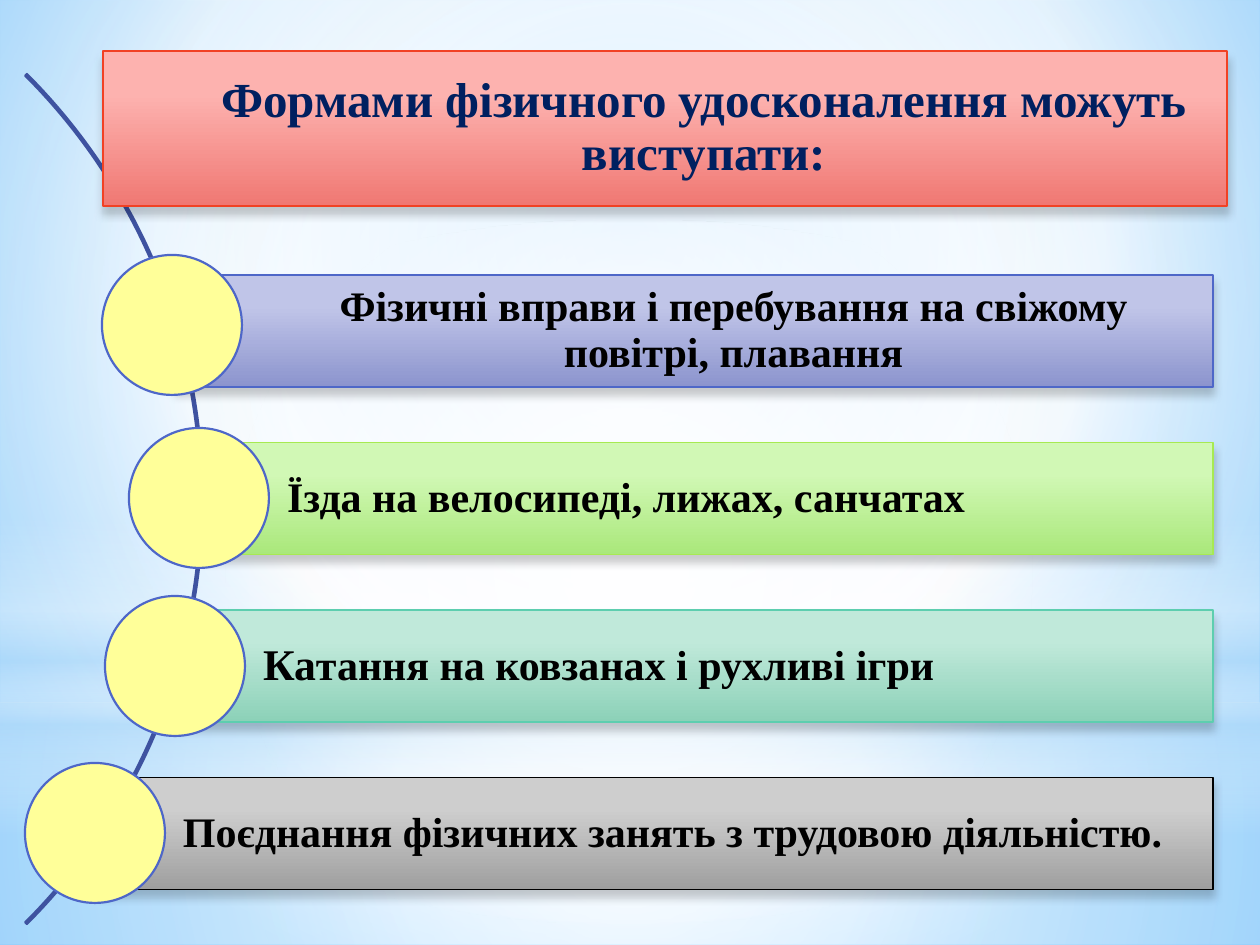
from pptx import Presentation
from pptx.dml.color import RGBColor
from pptx.enum.shapes import MSO_SHAPE
from pptx.enum.text import MSO_ANCHOR, MSO_AUTO_SIZE, PP_ALIGN
from pptx.oxml import parse_xml
from pptx.oxml.ns import nsdecls, qn
from pptx.util import Pt

# Content: header, then one row per form of exercise
HEAD = "Формами фізичного удосконалення можуть виступати:"
# runs (text, size key), alignment, bar left, knob centre, colour key
ROWS = [
    ([("Фізичні вправи і перебування на свіжому повітрі, плавання", "body")],
     PP_ALIGN.CENTER, 175, (172, 325), "blue"),
    ([("Їзда на велосипеді, лижах, санчатах", "body")],
     PP_ALIGN.LEFT, 199, (199, 498), "green"),
    ([("Ка", "lead"), ("тання на ковзанах і рухливі ігри", "body")],
     PP_ALIGN.LEFT, 175, (175, 666), "teal"),
    ([("Поєднання фізичних занять з трудовою діяльністю.", "body")],
     PP_ALIGN.LEFT, 95, (95, 833), "gray"),
]

THEME = {
    "font": "Times New Roman",
    "size": {"head": 28, "body": 24, "lead": 25},
    "head": "002060", "body": "000000",
    "arc": "3E52A0", "knob": "FFFF99", "ring": "4E67C8",
    # bar colours: top, bottom, line
    "bars": {
        "red": ("FDB2AF", "F07873", "F14124"),
        "blue": ("C0C5E8", "8C94CE", "4E67C8"),
        "green": ("D1F8B5", "AAE87B", "A7EA52"),
        "teal": ("C0E9DA", "8CD1B8", "5DCEAF"),
        "gray": ("CECECE", "9F9F9F", "000000"),
    },
    # gradient stops: position, colour, opacity
    "back": [(0, "9ED5FF", 100), (60, "FFFFFF", 100), (100, "5BB9FF", 100)],
    "floor": [(0, "FFFFFF", 91), (37, "FFFFFF", 76), (100, "B4DCFA", 79)],
    "sky": [(0, "FFFFFF", 89), (48, "FFFFFF", 62), (100, "B4DCFA", 79)],
    "haze": [(0, "FFFFFF", 0), (29, "FFFFFF", 30), (45, "B4DCFA", 40),
             (55, "FFFFFF", 26), (65, "B4DCFA", 60), (100, "FFFFFF", 0)],
    "glow": [(0, "FFFFFF", 100), (56, "FFFFFF", 0)],
}

WIDE, HIGH = 1260, 945
SCALE = 914400 / 126
MID = (50, 50, 50, 50)
# Backdrop layers: shape, top, height, stops, focus (None is linear)
LAYERS = [
    (MSO_SHAPE.RECTANGLE, 703, 242, "floor", MID),
    (MSO_SHAPE.RECTANGLE, 0, 703, "sky", MID),
    (MSO_SHAPE.RECTANGLE, 519, 315, "haze", None),
    (MSO_SHAPE.OVAL, 220, 703, "glow", MID),
]
BAR_TOP, BAR_STEP, BAR_HIGH, BAR_END = 275, 167.5, 112, 1213
KNOB = 140
INDENT = 88


def px(n):
    return round(n * SCALE)


def grad(stops, focus=None):
    marks = "".join(
        f'<a:gs pos="{at * 1000}"><a:srgbClr val="{tint}">'
        f'<a:alpha val="{alpha * 1000}"/></a:srgbClr></a:gs>'
        for at, tint, alpha in stops)
    if focus:
        l, t, r, b = (n * 1000 for n in focus)
        way = (f'<a:path path="circle"><a:fillToRect l="{l}" t="{t}" '
               f'r="{r}" b="{b}"/></a:path>')
    else:
        way = '<a:lin ang="5400000" scaled="0"/>'
    return parse_xml(f'<a:gradFill {nsdecls("a")} rotWithShape="1">'
                     f'<a:gsLst>{marks}</a:gsLst>{way}</a:gradFill>')


def shade(shape, stops, focus=None):
    shape.fill.background()
    props = shape.element.spPr
    props.replace(props.find(qn("a:noFill")), grad(stops, focus))


def edge(shape, tint, width):
    shape.line.color.rgb = RGBColor.from_string(tint)
    shape.line.width = Pt(width)


def place(shape, x, y, w, h):
    shape.left, shape.top, shape.width, shape.height = map(px, (x, y, w, h))


def add(slide, kind, x, y, w, h):
    shape = slide.shapes.add_shape(kind, *map(px, (x, y, w, h)))
    shape.shadow.inherit = False
    return shape


def style(shape, key):
    top, low, line = THEME["bars"][key]
    shade(shape, [(28, top, 100), (100, low, 100)])
    edge(shape, line, 0.75)
    shape.shadow.inherit = False
    shape.element.spPr.find(qn("a:effectLst")).append(parse_xml(
        f'<a:outerShdw {nsdecls("a")} blurRad="{Pt(5)}" dist="{Pt(4)}" '
        'dir="5400000" rotWithShape="0"><a:srgbClr val="000000">'
        '<a:alpha val="20000"/></a:srgbClr></a:outerShdw>'))


def write(shape, runs, align, tint, pad):
    frame = shape.text_frame
    frame.word_wrap = True
    frame.auto_size = MSO_AUTO_SIZE.NONE
    frame.vertical_anchor = MSO_ANCHOR.MIDDLE
    frame.margin_left = px(INDENT)
    frame.margin_top = frame.margin_right = frame.margin_bottom = px(pad)
    para = frame.paragraphs[0]
    para.alignment = align
    para.line_spacing = 0.9
    para.space_before = Pt(0)
    for text, size in runs:
        run = para.add_run()
        run.text = text
        run.font.name = THEME["font"]
        run.font.size = Pt(THEME["size"][size])
        run.font.bold = True
        run.font.color.rgb = RGBColor.from_string(tint)


def main():
    deck = Presentation()
    deck.slide_width, deck.slide_height = px(WIDE), px(HIGH)
    slide = deck.slides.add_slide(deck.slide_layouts[5])

    # Backdrop
    slide.background.fill.solid()
    back = slide.element.find(".//" + qn("p:bgPr"))
    back.replace(back[0], grad(THEME["back"], (20, 10, 20, 60)))
    for kind, top, high, stops, focus in LAYERS:
        layer = add(slide, kind, 0, top, WIDE, high)
        shade(layer, THEME[stops], focus)
        layer.line.fill.background()

    # Arc behind the rows
    arc = add(slide, MSO_SHAPE.BLOCK_ARC, -999, -102, 1202, 1202)
    for i, value in enumerate((189, 27, 0.002)):
        arc.adjustments[i] = value
    arc.fill.background()
    edge(arc, THEME["arc"], 1.25)

    # Header, raised above the backdrop
    title = slide.shapes.title
    title.element.getparent().append(title.element)
    place(title, 103, 51, 1124, 155)
    style(title, "red")
    write(title, [(HEAD, "head")], PP_ALIGN.CENTER, THEME["head"], 10)

    # Rows: bar, then knob
    for i, (runs, align, left, (x, y), key) in enumerate(ROWS):
        bar = add(slide, MSO_SHAPE.RECTANGLE, left, BAR_TOP + i * BAR_STEP,
                  BAR_END - left, BAR_HIGH)
        style(bar, key)
        write(bar, runs, align, THEME["body"], 9)
        knob = add(slide, MSO_SHAPE.OVAL, x - KNOB / 2, y - KNOB / 2,
                   KNOB, KNOB)
        knob.fill.solid()
        knob.fill.fore_color.rgb = RGBColor.from_string(THEME["knob"])
        edge(knob, THEME["ring"], 1.25)

    deck.save("out.pptx")


if __name__ == "__main__":
    main()
